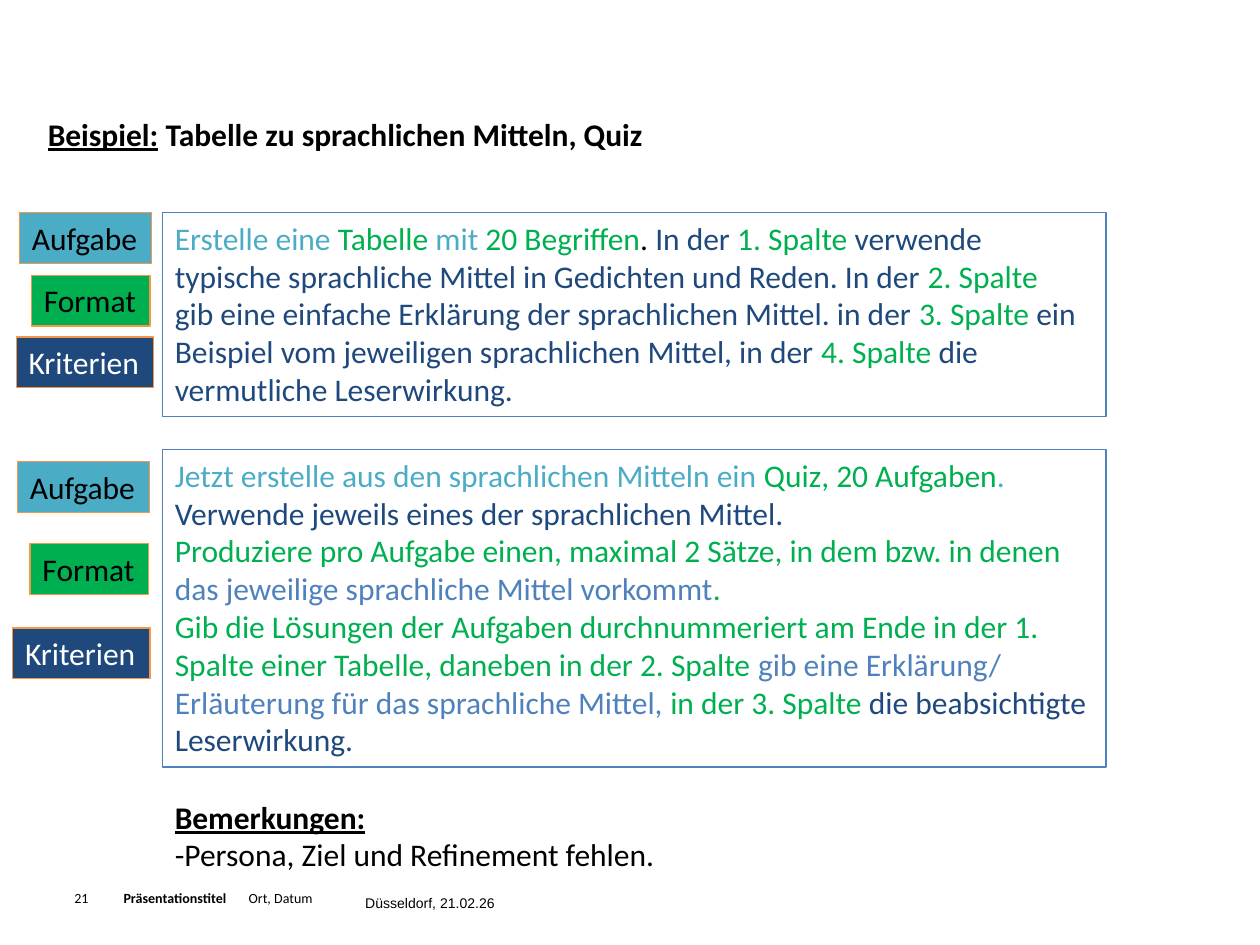
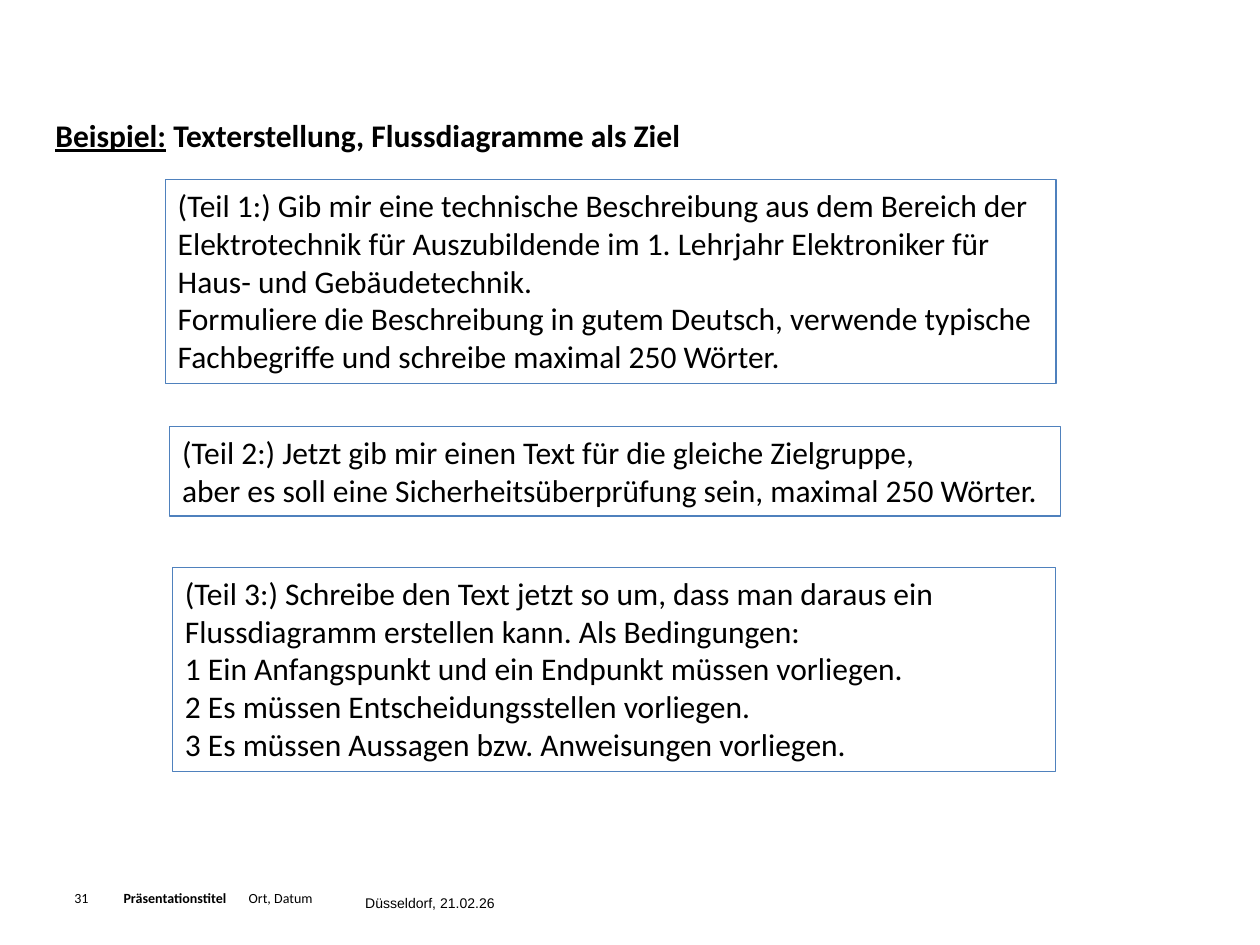
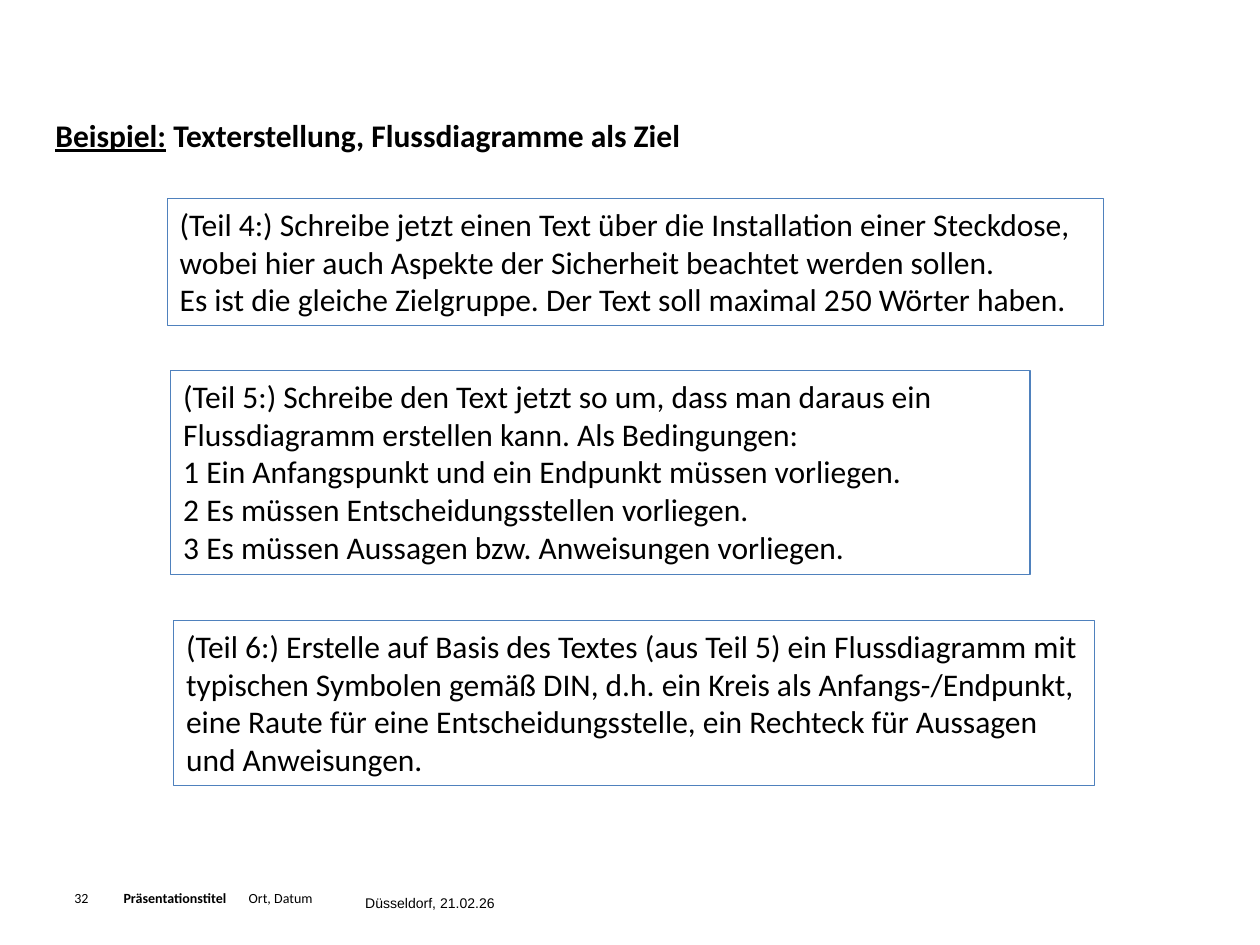
"""Build three slides with example prompts for vocational teaching."""
from lxml import etree
from pptx import Presentation
from pptx.dml.color import RGBColor
from pptx.enum import shapes, text
from pptx.oxml import ns
from pptx.util import Pt

BLACK = RGBColor(0x00, 0x00, 0x00)
WHITE = RGBColor(0xFF, 0xFF, 0xFF)
TEAL = RGBColor(0x4B, 0xAC, 0xC6)
GREEN = RGBColor(0x00, 0xB0, 0x50)
NAVY = RGBColor(0x1F, 0x49, 0x7D)
BLUE = RGBColor(0x4F, 0x81, 0xBD)
ORANGE = RGBColor(0xF7, 0x96, 0x46)


def write(frame, paragraphs, size=18, font="Calibri"):
    frame.vertical_anchor = text.MSO_ANCHOR.TOP
    for index, runs in enumerate(paragraphs):
        paragraph = frame.add_paragraph() if index else frame.paragraphs[0]
        paragraph.alignment = text.PP_ALIGN.LEFT
        for words, color, *emphasis in runs:
            run = paragraph.add_run()
            run.text = words
            run.font.name = font
            run.font.size = Pt(size)
            run.font.color.rgb = color
            run.font.bold = "bold" in emphasis
            run.font.underline = "underline" in emphasis


def add_box(slide, place, paragraphs, line=None, fill=None, wrap=True):
    place = [Pt(length) for length in place]
    if line is None:
        box = slide.shapes.add_textbox(*place)
    else:
        box = slide.shapes.add_shape(shapes.MSO_SHAPE.RECTANGLE, *place)
        box.shadow.inherit = False
        box.line.color.rgb = line
        box.line.width = Pt(0.75)
        if fill is None:
            box.fill.background()
        else:
            box.fill.solid()
            box.fill.fore_color.rgb = fill
    box.text_frame.word_wrap = wrap
    box.text_frame.auto_size = text.MSO_AUTO_SIZE.SHAPE_TO_FIT_TEXT
    write(box.text_frame, paragraphs)


prs = Presentation()
prs.slide_width = Pt(720)
prs.slide_height = Pt(540)

flowchart_conditions = [
    "Flussdiagramm erstellen kann. Als Bedingungen:",
    "1 Ein Anfangspunkt und ein Endpunkt müssen vorliegen.",
    "2 Es müssen Entscheidungsstellen vorliegen.",
    "3 Es müssen Aussagen bzw. Anweisungen vorliegen.",
]
table_prompt = [
    [("Erstelle eine ", TEAL), ("Tabelle ", GREEN), ("mit ", TEAL),
     ("20 Begriffen", GREEN), (". ", BLACK), ("In der ", NAVY),
     ("1. Spalte ", GREEN),
     ("verwende typische sprachliche Mittel in Gedichten und Reden. In der ", NAVY),
     ("2. Spalte", GREEN)],
    [("gib eine einfache Erklärung der sprachlichen Mittel. in der ", NAVY),
     ("3. Spalte ", GREEN),
     ("ein Beispiel vom jeweiligen sprachlichen Mittel, in der ", NAVY),
     ("4. Spalte ", GREEN), ("die vermutliche Leserwirkung.", NAVY)],
]
quiz_prompt = [
    [("Jetzt erstelle aus den sprachlichen Mitteln ein ", TEAL),
     ("Quiz, 20 Aufgaben", GREEN), (".", TEAL)],
    [("Verwende jeweils eines der sprachlichen Mittel.", NAVY)],
    [("Produziere pro Aufgabe einen, maximal 2 Sätze, in dem bzw. in denen ", GREEN),
     ("das jeweilige sprachliche Mittel vorkommt", BLUE), (".", GREEN)],
    [("Gib die Lösungen der Aufgaben durchnummeriert am Ende in der 1. Spalte "
      "einer Tabelle, daneben in der 2. Spalte ", GREEN),
     ("gib eine Erklärung/ Erläuterung für das sprachliche Mittel, ", BLUE),
     ("in der 3. Spalte ", GREEN), ("die beabsichtigte Leserwirkung.", NAVY)],
]
flowchart_parts_1_to_3 = [
    ((94.5, 102.7, 509, 116.6), [
        "(Teil 1:) Gib mir eine technische Beschreibung aus dem Bereich der",
        "Elektrotechnik für Auszubildende im 1. Lehrjahr Elektroniker für",
        "Haus- und Gebäudetechnik.",
        "Formuliere die Beschreibung in gutem Deutsch, verwende typische "
        "Fachbegriffe und schreibe maximal 250 Wörter."]),
    ((97, 243.8, 509, 51), [
        "(Teil 2:) Jetzt gib mir einen Text für die gleiche Zielgruppe,",
        "aber es soll eine Sicherheitsüberprüfung sein, maximal 250 Wörter."]),
    ((98.6, 324.3, 504.7, 116.6), [
        "(Teil 3:) Schreibe den Text jetzt so um, dass man daraus ein",
        *flowchart_conditions]),
]
flowchart_parts_4_to_6 = [
    ((95.6, 113.5, 535, 72.7), [
        "(Teil 4:) Schreibe jetzt einen Text über die Installation einer Steckdose,",
        "wobei hier auch Aspekte der Sicherheit beachtet werden sollen.",
        "Es ist die gleiche Zielgruppe. Der Text soll maximal 250 Wörter haben."]),
    ((97.6, 211.8, 491, 116.6), [
        "(Teil 5:) Schreibe den Text jetzt so um, dass man daraus ein",
        *flowchart_conditions]),
    ((99.2, 354.6, 526.3, 94.3), [
        "(Teil 6:) Erstelle auf Basis des Textes (aus Teil 5) ein Flussdiagramm mit "
        "typischen Symbolen gemäß DIN, d.h. ein Kreis als Anfangs-/Endpunkt, eine "
        "Raute für eine Entscheidungsstelle, ein Rechteck für Aussagen und "
        "Anweisungen."]),
]
flowchart_title = "Texterstellung, Flussdiagramme als Ziel"
pages = [
    ("21", (20.2, 62, 356, 29), "Tabelle zu sprachlichen Mitteln, Quiz", []),
    ("31", (24.6, 62.6, 430, 51), flowchart_title, flowchart_parts_1_to_3),
    ("32", (24.6, 62.6, 430, 51), flowchart_title, flowchart_parts_4_to_6),
]

for number, title_place, title, parts in pages:
    slide = prs.slides.add_slide(prs.slide_layouts[6])

    footer = slide.shapes.add_textbox(Pt(70.6), Pt(508.3), Pt(164), Pt(26.6))
    page_number = slide.shapes.add_textbox(Pt(42.5), Pt(508.3), Pt(23), Pt(26.6))
    for frame in (footer.text_frame, page_number.text_frame):
        frame.word_wrap = True
        frame.margin_left = frame.margin_right = 0
        frame.margin_top = frame.margin_bottom = 0
    properties = footer.text_frame.paragraphs[0]._p.get_or_add_pPr()
    tabs = etree.SubElement(properties, ns.qn("a:tabLst"))
    etree.SubElement(tabs, ns.qn("a:tab"), pos=str(Pt(71.5)), algn="l")
    write(footer.text_frame,
          [[("Präsentationstitel\t", BLACK, "bold"), ("Ort, Datum", BLACK)]], 8)
    write(page_number.text_frame, [[(number, BLACK)]], 8)
    place_and_date = slide.shapes.add_textbox(Pt(201.6), Pt(507.6), Pt(196.6), Pt(28.8))
    place_and_date.text_frame.word_wrap = True
    write(place_and_date.text_frame, [[("Düsseldorf, 21.02.26", BLACK)]], 8, "Arial")

    add_box(slide, title_place,
            [[("Beispiel:", BLACK, "bold", "underline"), (" " + title, BLACK, "bold")]])
    for part_place, lines in parts:
        add_box(slide, part_place, [[(line, BLACK)] for line in lines], BLUE)

quiz_slide = prs.slides[0]
add_box(quiz_slide, (92.8, 121.5, 539.3, 116.6), table_prompt, BLUE)
add_box(quiz_slide, (92.8, 256.9, 539.3, 181.4), quiz_prompt, BLUE)
add_box(quiz_slide, (92.8, 452.2, 297.4, 51), [
    [("Bemerkungen:", BLACK, "bold", "underline")],
    [("-Persona, Ziel und Refinement fehlen.", BLACK)],
])

tags = [
    ("Aufgabe", 75.6, TEAL, BLACK),
    ("Format", 67.7, GREEN, BLACK),
    ("Kriterien", 78.5, NAVY, WHITE),
]
tag_corners = [
    [(11.2, 121.5), (18, 157.3), (9.3, 192.5)],
    [(10, 263.8), (17.2, 310.7), (7.2, 358.8)],
]
for corners in tag_corners:
    for (left, top), (label, width, fill, color) in zip(corners, tags):
        add_box(quiz_slide, (left, top, width, 29), [[(label, color)]],
                ORANGE, fill, wrap=False)

prs.save("out.pptx")
